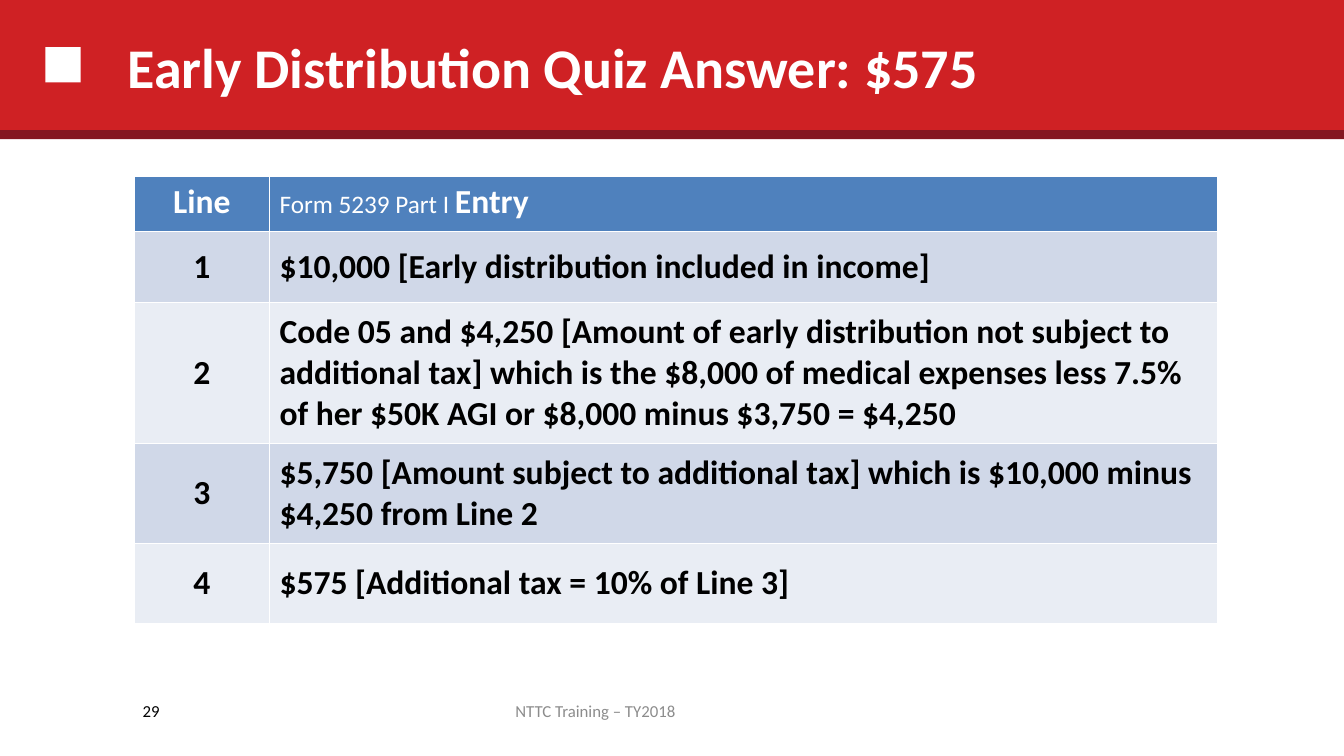
from pptx import Presentation
from pptx.dml.color import RGBColor
from pptx.enum.shapes import MSO_SHAPE
from pptx.enum.text import MSO_ANCHOR, MSO_AUTO_SIZE, PP_ALIGN
from pptx.util import Inches, Pt

COLORS = {
    "red": "CF2124",
    "maroon": "841721",
    "white": "FFFFFF",
    "black": "000000",
    "gray": "8C8C8C",
    "header": "4F81BD",
    "odd": "D0D8E8",
    "even": "E9EDF4",
}
COLS, ROWS = 80, 45
ENTRIES = [
    "$10,000 [Early distribution included in income]",
    "Code 05 and $4,250 [Amount of early distribution not subject to additional tax] "
    "which is the $8,000 of medical expenses less 7.5% of her $50K AGI "
    "or $8,000 minus $3,750 = $4,250",
    "$5,750 [Amount subject to additional tax] which is $10,000 minus $4,250 from Line 2",
    "$575 [Additional tax = 10% of Line 3]",
]


def color(name):
    return RGBColor.from_string(COLORS[name])


def grid(n):
    return Inches(n / 6)


class SlideBuilder:
    font = "Calibri"

    def __init__(self, prs):
        self.s = prs.slides.add_slide(prs.slide_layouts[5])

    def style(self, font, size, fill, bold=False):
        font.name = self.font
        font.size = Pt(size)
        font.bold = bold
        font.color.rgb = color(fill)

    def block(self, x, y, w, h, fill):
        sp = self.s.shapes.add_shape(MSO_SHAPE.RECTANGLE, *map(grid, (x, y, w, h)))
        sp.shadow.inherit = False
        sp.fill.solid()
        sp.fill.fore_color.rgb = color(fill)
        sp.line.fill.background()

    def title(self, x, y, w, h, text):
        sp = self.s.shapes.title
        sp.left, sp.top, sp.width, sp.height = map(grid, (x, y, w, h))
        self.s.shapes.element.append(sp.element)
        self.fill_text(sp.text_frame, text, 40, "white", PP_ALIGN.LEFT, True)

    def text(self, x, y, w, h, text, fill, align):
        sp = self.s.shapes.add_textbox(*map(grid, (x, y, w, h)))
        self.fill_text(sp.text_frame, text, 12, fill, align)

    def fill_text(self, tf, text, size, fill, align, bold=False):
        tf.text = text
        tf.word_wrap = True
        tf.auto_size = MSO_AUTO_SIZE.NONE
        tf.vertical_anchor = MSO_ANCHOR.MIDDLE
        p = tf.paragraphs[0]
        p.alignment = align
        self.style(p.font, size, fill, bold)

    def cell(self, cell, runs, fill, ink, align, anchor):
        cell.fill.solid()
        cell.fill.fore_color.rgb = color(fill)
        cell.vertical_anchor = anchor
        p = cell.text_frame.paragraphs[0]
        p.alignment = align
        for text, size, bold in runs:
            r = p.add_run()
            r.text = text
            self.style(r.font, size, ink, bold)

    def table(self, x, y, widths, heights, rows):
        frame = self.s.shapes.add_table(
            len(heights), len(widths),
            *map(grid, (x, y, sum(widths), sum(heights))))
        table = frame.table
        for column, width in zip(table.columns, widths):
            column.width = grid(width)
        for i, (height, row) in enumerate(zip(heights, rows)):
            table.rows[i].height = grid(height)
            fill, ink, anchor = ("odd" if i % 2 else "even"), "black", MSO_ANCHOR.MIDDLE
            if i == 0:
                fill, ink, anchor = "header", "white", MSO_ANCHOR.TOP
            for j, runs in enumerate(row):
                align = PP_ALIGN.LEFT if j else PP_ALIGN.CENTER
                self.cell(table.cell(i, j), runs, fill, ink, align, anchor)


def main():
    prs = Presentation()
    prs.slide_width, prs.slide_height = grid(COLS), grid(ROWS)
    slide = SlideBuilder(prs)
    slide.block(0, 0, COLS, 7.9, "red")
    slide.block(2.7, 2.8, 2.1, 2.1, "white")
    slide.block(0, 7.74, COLS, 0.54, "maroon")
    slide.text(22.8, 41.1, 25.3, 2.4, "NTTC Training – TY2018", "gray", PP_ALIGN.CENTER)
    slide.text(4, 41.1, 6.1, 2.4, "29", "black", PP_ALIGN.RIGHT)
    slide.title(7, 0.2, 64, 7.5, "Early Distribution Quiz Answer: $575")
    header = [[("Line", 24, True)],
              [("Form 5239 Part I ", 18, False), ("Entry", 24, True)]]
    body = [[[(str(n), 24, True)], [(entry, 24, True)]]
            for n, entry in enumerate(ENTRIES, 1)]
    slide.table(8, 10.5, [8.04, 56.46], [3.3, 4.2, 8.4, 5.94, 4.8], [header] + body)
    prs.save("out.pptx")


if __name__ == "__main__":
    main()
